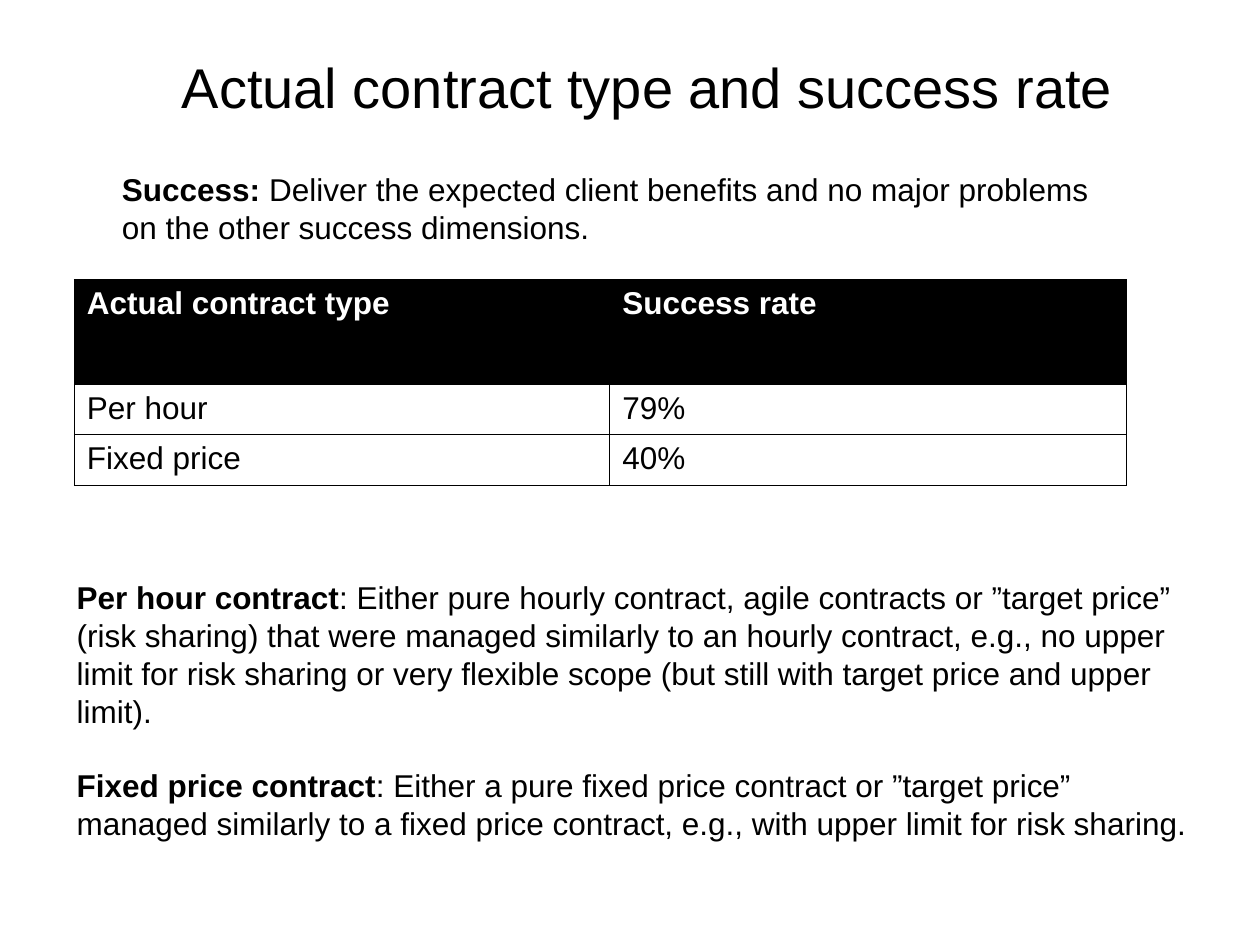
from lxml import etree
from pptx import Presentation
from pptx import util as u
from pptx.dml import color
from pptx.enum import text
from pptx.oxml import ns

WIDTH, HEIGHT = 10, 7.5
FONT = "Arial"
BODY_SIZE = 18
COLORS = {"ink": "000000", "paper": "FFFFFF"}
REGIONS = {
    "title": (0.5, 0.3, 9.28, 0.77),
    "success": (0.87, 1.3, 8.07, 0.71),
    "rates": (0.59, 2.22, 8.35, 1.59),
    "contracts": (0.51, 4.54, 9.05, 2.16),
}
RATES = [
    ("Actual contract type", "Success rate"),
    ("Per hour", "79%"),
    ("Fixed price", "40%"),
]
COLUMN_WIDTHS = (4.25, 4.1)
ROW_HEIGHTS = (0.83, 0.38, 0.38)
SUCCESS = [
    ("Success: ", "Deliver the expected client benefits and no major problems "
     "on the other success dimensions."),
]
CONTRACTS = [
    ("Per hour contract", ": Either pure hourly contract, agile contracts or "
     "”target price” (risk sharing) that were managed similarly to an hourly "
     "contract, e.g., no upper limit for risk sharing or very flexible scope "
     "(but still with target price and upper limit)."),
    ("Fixed price contract", ": Either a pure fixed price contract or "
     "”target price” managed similarly to a fixed price contract, e.g., "
     "with upper limit for risk sharing."),
]


def rgb(name):
    return color.RGBColor.from_string(COLORS[name])


def add_run(paragraph, wording, size=BODY_SIZE, ink="ink", bold=False):
    run = paragraph.add_run()
    run.text = wording
    run.font.name = FONT
    run.font.size = u.Pt(size)
    run.font.bold = bold
    run.font.color.rgb = rgb(ink)


def add_text_frame(slide, box):
    frame = slide.shapes.add_textbox(*map(u.Inches, box)).text_frame
    frame.word_wrap = True
    return frame


def add_title(slide, box, wording):
    frame = add_text_frame(slide, box)
    frame.vertical_anchor = text.MSO_ANCHOR.MIDDLE
    paragraph = frame.paragraphs[0]
    paragraph.alignment = text.PP_ALIGN.CENTER
    add_run(paragraph, wording, size=32)


def add_definitions(slide, box, definitions):
    frame = add_text_frame(slide, box)
    for index, (term, meaning) in enumerate(definitions):
        paragraph = frame.add_paragraph() if index else frame.paragraphs[0]
        paragraph.space_before = u.Pt(21 if index else 0)
        add_run(paragraph, term, bold=True)
        add_run(paragraph, meaning)


def add_borders(cell):
    properties = cell._tc.get_or_add_tcPr()
    for index, side in enumerate(("a:lnL", "a:lnR", "a:lnT", "a:lnB")):
        line = etree.Element(ns.qn(side), w=str(u.Pt(0.75)))
        fill = etree.SubElement(line, ns.qn("a:solidFill"))
        etree.SubElement(fill, ns.qn("a:srgbClr"), val=COLORS["ink"])
        properties.insert(index, line)


def add_rates_table(slide, box, rows):
    table = slide.shapes.add_table(
        len(rows), len(rows[0]), *map(u.Inches, box)).table
    for column, width in zip(table.columns, COLUMN_WIDTHS):
        column.width = u.Inches(width)
    for row, height in zip(table.rows, ROW_HEIGHTS):
        row.height = u.Inches(height)
    for row_index, row in enumerate(rows):
        header = row_index == 0
        for column_index, wording in enumerate(row):
            cell = table.cell(row_index, column_index)
            if header:
                cell.fill.solid()
                cell.fill.fore_color.rgb = rgb("ink")
            else:
                cell.fill.background()
            add_borders(cell)
            add_run(cell.text_frame.paragraphs[0], wording,
                    ink="paper" if header else "ink", bold=header)


def main():
    presentation = Presentation()
    presentation.slide_width = u.Inches(WIDTH)
    presentation.slide_height = u.Inches(HEIGHT)
    slide = presentation.slides.add_slide(presentation.slide_layouts[6])
    slide.background.fill.solid()
    slide.background.fill.fore_color.rgb = rgb("paper")
    add_title(slide, REGIONS["title"], "Actual contract type and success rate")
    add_rates_table(slide, REGIONS["rates"], RATES)
    add_definitions(slide, REGIONS["contracts"], CONTRACTS)
    add_definitions(slide, REGIONS["success"], SUCCESS)
    presentation.save("out.pptx")


if __name__ == "__main__":
    main()
